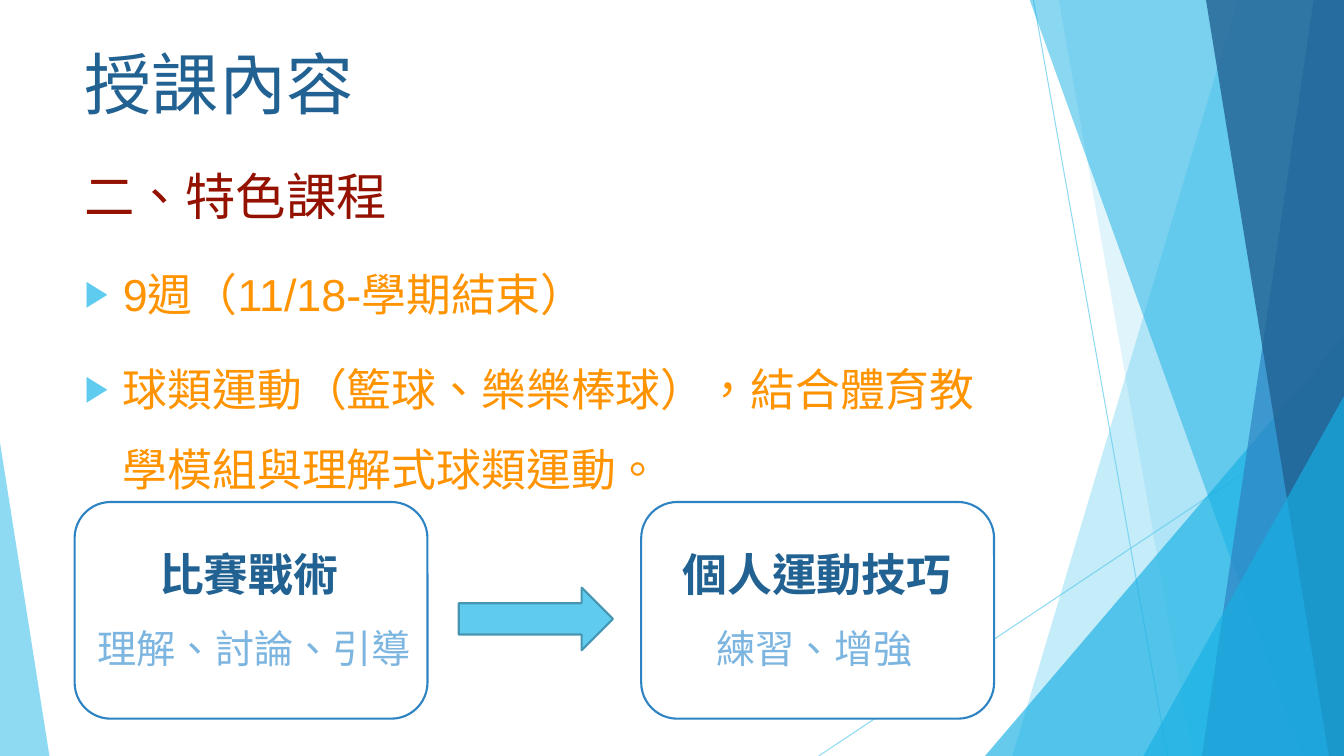
from dataclasses import dataclass

from lxml.etree import SubElement
from pptx import Presentation
from pptx.dml.color import RGBColor
from pptx.enum.lang import MSO_LANGUAGE_ID
from pptx.enum.shapes import MSO_CONNECTOR, MSO_SHAPE
from pptx.enum.text import MSO_ANCHOR, PP_ALIGN
from pptx.oxml.ns import qn
from pptx.util import Inches, Pt

WHITE = RGBColor(0xFF, 0xFF, 0xFF)
SKY = RGBColor(0x5F, 0xCB, 0xEF)
CYAN = RGBColor(0x17, 0xB0, 0xE4)
BLUE = RGBColor(0x2E, 0x83, 0xC3)
NAVY = RGBColor(0x22, 0x62, 0x92)
PALE_BLUE = RGBColor(0x7C, 0xB5, 0xE0)
TEAL = RGBColor(0x46, 0x96, 0xB1)
RED = RGBColor(0x94, 0x11, 0x00)
ORANGE = RGBColor(0xFF, 0x93, 0x00)

WIDTH, HEIGHT = 13.33, 7.5
CARD_TOP, CARD_WIDTH, CARD_HEIGHT = 4.98, 3.5, 2.15


@dataclass
class Band:
    top_left: float
    bottom_left: float
    color: RGBColor
    opacity: int


@dataclass
class Corner:
    left: float
    top: float
    width: float
    apex: float
    color: RGBColor
    opacity: int


@dataclass
class Label:
    text: str
    left: float
    top: float
    width: float
    height: float
    font: dict


@dataclass
class Card:
    left: float
    labels: list[Label]


HEADING = {"name": "Cabin", "size": Pt(32), "bold": True, "color": NAVY}
DETAIL = {"name": "Cabin", "size": Pt(28), "bold": False, "color": PALE_BLUE}

RAYS = [(10.25, 0, 11.58, HEIGHT), (WIDTH, 4.03, 8.12, HEIGHT)]
DECOR = [
    Band(12.28, 10.04, SKY, 36),
    Band(10.5, 11.83, SKY, 20),
    Corner(9.77, 3.33, 3.56, 1, CYAN, 66),
    Band(10.21, 12.91, CYAN, 50),
    Band(13.03, 11.92, BLUE, 70),
    Band(11.96, 13.18, NAVY, 80),
    Corner(11.34, 3.93, 1.99, 1, CYAN, 66),
    Corner(0, 4.39, 0.49, 0, SKY, 70),
]
CARDS = [
    Card(0.74, [Label("比賽戰術", 1.48, 5.37, 2.02, 0.64, HEADING),
                Label("理解、討論、引導", 0.87, 6.14, 3.37, 0.57, DETAIL)]),
    Card(6.36, [Label("個人運動技巧", 6.67, 5.37, 2.92, 0.64, HEADING),
                Label("練習、增強", 7.01, 6.14, 2.2, 0.57, DETAIL)]),
]
BULLETS = ["9週（11/18-學期結束）", "球類運動（籃球、樂樂棒球），結合體育教學模組與理解式球類運動。"]


def set_opacity(s, percent: int) -> None:
    color = next(s._element.spPr.iter(qn("a:srgbClr")))
    SubElement(color, qn("a:alpha"), val=str(percent * 1000))


def write(p, text: str, font: dict) -> None:
    r = p.add_run()
    r.text = text
    r.font.language_id = MSO_LANGUAGE_ID.TRADITIONAL_CHINESE
    for key, value in font.items():
        if key == "color":
            r.font.color.rgb = value
        else:
            setattr(r.font, key, value)


def add_preset(shapes, kind, box: tuple, fill: RGBColor, line: RGBColor | None = None):
    s = shapes.add_shape(kind, *map(Inches, box))
    s.shadow.inherit = False
    s.fill.solid()
    s.fill.fore_color.rgb = fill
    if line is None:
        s.line.fill.background()
    else:
        s.line.color.rgb = line
        s.line.width = Pt(1.5)
    return s


def add_ray(shapes, ends: tuple) -> None:
    s = shapes.add_connector(MSO_CONNECTOR.STRAIGHT, *map(Inches, ends))
    s.line.color.rgb = SKY
    s.line.width = Pt(0.75)
    set_opacity(s, 70)
    SubElement(s._element.spPr, qn("a:effectLst"))


def add_band(shapes, band: Band) -> None:
    builder = shapes.build_freeform(Inches(band.top_left), Inches(-0.01))
    corners = [(WIDTH, -0.01), (WIDTH, HEIGHT), (band.bottom_left, HEIGHT)]
    builder.add_line_segments([(Inches(x), Inches(y)) for x, y in corners])
    s = builder.convert_to_shape()
    s.shadow.inherit = False
    s.fill.solid()
    s.fill.fore_color.rgb = band.color
    s.line.fill.background()
    set_opacity(s, band.opacity)


def add_corner(shapes, corner: Corner) -> None:
    box = (corner.left, corner.top, corner.width, HEIGHT - corner.top)
    s = add_preset(shapes, MSO_SHAPE.ISOSCELES_TRIANGLE, box, corner.color)
    s.adjustments[0] = corner.apex
    set_opacity(s, corner.opacity)


def add_text_box(shapes, box: tuple):
    tf = shapes.add_textbox(*map(Inches, box)).text_frame
    tf.word_wrap = True
    return tf


def add_bullet(p) -> None:
    pPr = p._p.get_or_add_pPr()
    pPr.set("marL", str(Inches(0.38)))
    pPr.set("indent", str(-Inches(0.38)))
    SubElement(SubElement(pPr, qn("a:buClr")), qn("a:srgbClr"), val=str(SKY))
    SubElement(pPr, qn("a:buSzPct"), val="80000")
    SubElement(pPr, qn("a:buFont"), typeface="Arial")
    SubElement(pPr, qn("a:buChar"), char="▶")


def set_title(title) -> None:
    box = {"left": 0.74, "top": 0.37, "width": 9.4, "height": 0.92}
    for key, value in box.items():
        setattr(title, key, Inches(value))
    tf = title.text_frame
    tf.vertical_anchor = MSO_ANCHOR.TOP
    p = tf.paragraphs[0]
    p.alignment = PP_ALIGN.LEFT
    write(p, "授課內容", {"name": "Cabin", "size": Pt(48), "color": NAVY})


def add_body(shapes) -> None:
    tf = add_text_box(shapes, (0.74, 1.29, 9.4, 3.65))
    heading = tf.paragraphs[0]
    write(heading, "二、特色課程", {"name": "Arial", "size": Pt(36), "color": RED})
    for text in BULLETS:
        p = tf.add_paragraph()
        write(p, text, {"name": "Arial", "size": Pt(32), "color": ORANGE})
    for p in tf.paragraphs:
        p.line_spacing = 1.5
        p.space_before = Pt(10)
    for p in tf.paragraphs[1:]:
        add_bullet(p)


def main() -> None:
    prs = Presentation()
    prs.slide_width, prs.slide_height = Inches(WIDTH), Inches(HEIGHT)
    slide = prs.slides.add_slide(prs.slide_layouts[5])
    shapes = slide.shapes
    for ends in RAYS:
        add_ray(shapes, ends)
    for item in DECOR:
        if isinstance(item, Band):
            add_band(shapes, item)
        else:
            add_corner(shapes, item)
    set_title(shapes.title)
    add_body(shapes)
    for card in CARDS:
        box = (card.left, CARD_TOP, CARD_WIDTH, CARD_HEIGHT)
        add_preset(shapes, MSO_SHAPE.ROUNDED_RECTANGLE, box, WHITE, BLUE)
        for label in card.labels:
            tf = add_text_box(shapes, (label.left, label.top, label.width, label.height))
            write(tf.paragraphs[0], label.text, label.font)
    add_preset(shapes, MSO_SHAPE.RIGHT_ARROW, (4.55, 5.83, 1.53, 0.62), SKY, TEAL)
    prs.save("out.pptx")


if __name__ == "__main__":
    main()
